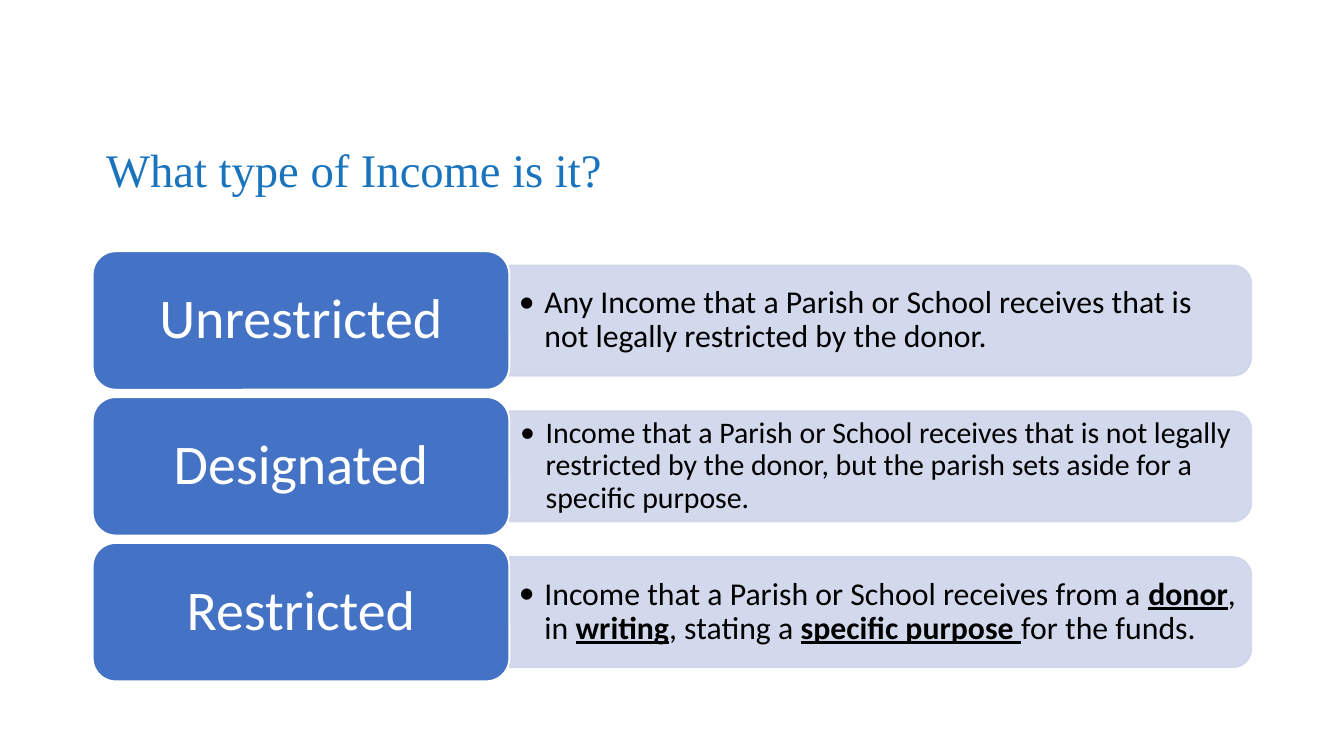
from dataclasses import dataclass

from lxml.etree import SubElement
from pptx import Presentation
from pptx.dml.color import RGBColor
from pptx.enum.shapes import MSO_SHAPE as Shape
from pptx.enum.text import MSO_ANCHOR as Anchor, PP_ALIGN as Align
from pptx.oxml.ns import qn
from pptx.util import Pt

PX = 4572


@dataclass(frozen=True)
class Theme:
    title: str = "1A74BD"
    label: str = "4472C4"
    panel: str = "CFD5EA"
    light: str = "FFFFFF"
    dark: str = "000000"
    serif: str = "Times New Roman"
    sans: str = "Calibri"
    title_size: int = 25
    label_size: int = 30
    panel_alpha: int = 90


def add_run(p, text, font, size, color, strong=False):
    r = p.add_run()
    r.text = text
    r.font.name = font
    r.font.size = Pt(size)
    r.font.color.rgb = RGBColor.from_string(color)
    r.font.bold = r.font.underline = strong


class SlideBuilder:
    def __init__(self, slide, theme):
        self.slide = slide
        self.theme = theme

    def box(self, x, y, w, h):
        return [v * PX for v in (x, y, w, h)]

    def frame(self, sp, inset_x, inset_y):
        tf = sp.text_frame
        tf.word_wrap = True
        tf.vertical_anchor = Anchor.MIDDLE
        tf.margin_left = tf.margin_right = inset_x * PX
        tf.margin_top = tf.margin_bottom = inset_y * PX
        p = tf.paragraphs[0]
        p.line_spacing = 0.9
        return p

    def title(self, text, x, y, w, h):
        t = self.theme
        sp = self.slide.shapes.title
        sp.left, sp.top, sp.width, sp.height = self.box(x, y, w, h)
        p = self.frame(sp, 20, 10)
        p.alignment = Align.LEFT
        add_run(p, text, font=t.serif, size=t.title_size, color=t.title)

    def shape(self, kind, x, y, w, h, fill, line):
        sp = self.slide.shapes.add_shape(kind, *self.box(x, y, w, h))
        sp.shadow.inherit = False
        sp.fill.solid()
        sp.fill.fore_color.rgb = RGBColor.from_string(fill)
        sp.line.color.rgb = RGBColor.from_string(line)
        sp.line.width = Pt(1)
        return sp

    def panel(self, x, y, w, h):
        t = self.theme
        left, top = x + (w - h) // 2, y + (h - w) // 2
        sp = self.shape(Shape.ROUND_2_SAME_RECTANGLE, left, top, h, w, t.panel, t.panel)
        sp.rotation = 90
        for color in sp._element.spPr.iter(qn("a:srgbClr")):
            SubElement(color, qn("a:alpha"), val=str(t.panel_alpha * 1000))

    def bullet(self, runs, x, y, w, h, size, inset):
        t = self.theme
        sp = self.slide.shapes.add_textbox(*self.box(x, y, w, h))
        p = self.frame(sp, inset, 8)
        pPr = p._p.get_or_add_pPr()
        pPr.set("marL", str(38 * PX))
        pPr.set("indent", str(-38 * PX))
        SubElement(pPr, qn("a:buFont"), typeface=t.sans)
        SubElement(pPr, qn("a:buChar"), char="•")
        for i, text in enumerate(runs):
            add_run(p, text, font=t.sans, size=size, color=t.dark, strong=i % 2 == 1)

    def label(self, text, x, y, w, h):
        t = self.theme
        sp = self.shape(Shape.ROUNDED_RECTANGLE, x, y, w, h, t.label, t.light)
        p = self.frame(sp, 24, 12)
        p.alignment = Align.CENTER
        add_run(p, text, font=t.sans, size=t.label_size, color=t.light)


ROWS = [
    ("Unrestricted", 17, 14,
     ["Any Income that a Parish or School receives that is not legally "
      "restricted by the donor."]),
    ("Designated", 16, 16,
     ["Income that a Parish or School receives that is not legally restricted "
      "by the donor, but the parish sets aside for a specific purpose."]),
    ("Restricted", 17, 14,
     ["Income that a Parish or School receives from a ", "donor", ", in ",
      "writing", ", stating a ", "specific purpose ", "for the funds."]),
]
LEFT, TOP, PITCH = 138, 374, 217
LABEL_W, LABEL_H = 620, 206
PANEL_W, PANEL_H = 1104, 164


def main():
    prs = Presentation()
    prs.slide_width, prs.slide_height = 2000 * PX, 1125 * PX
    s = SlideBuilder(prs.slides.add_slide(prs.slide_layouts[5]), Theme())
    s.title("What type of Income is it?", LEFT, 190, 1724, 132)
    panel_x = LEFT + LABEL_W
    for i, (name, size, inset, runs) in enumerate(ROWS):
        y = TOP + i * PITCH
        s.panel(panel_x, y + (LABEL_H - PANEL_H) // 2, PANEL_W, PANEL_H)
        s.bullet(runs, panel_x, y + 29, PANEL_W - 8, PANEL_H - 16, size, inset)
        s.label(name, LEFT, y, LABEL_W, LABEL_H)
    prs.save("out.pptx")


if __name__ == "__main__":
    main()
